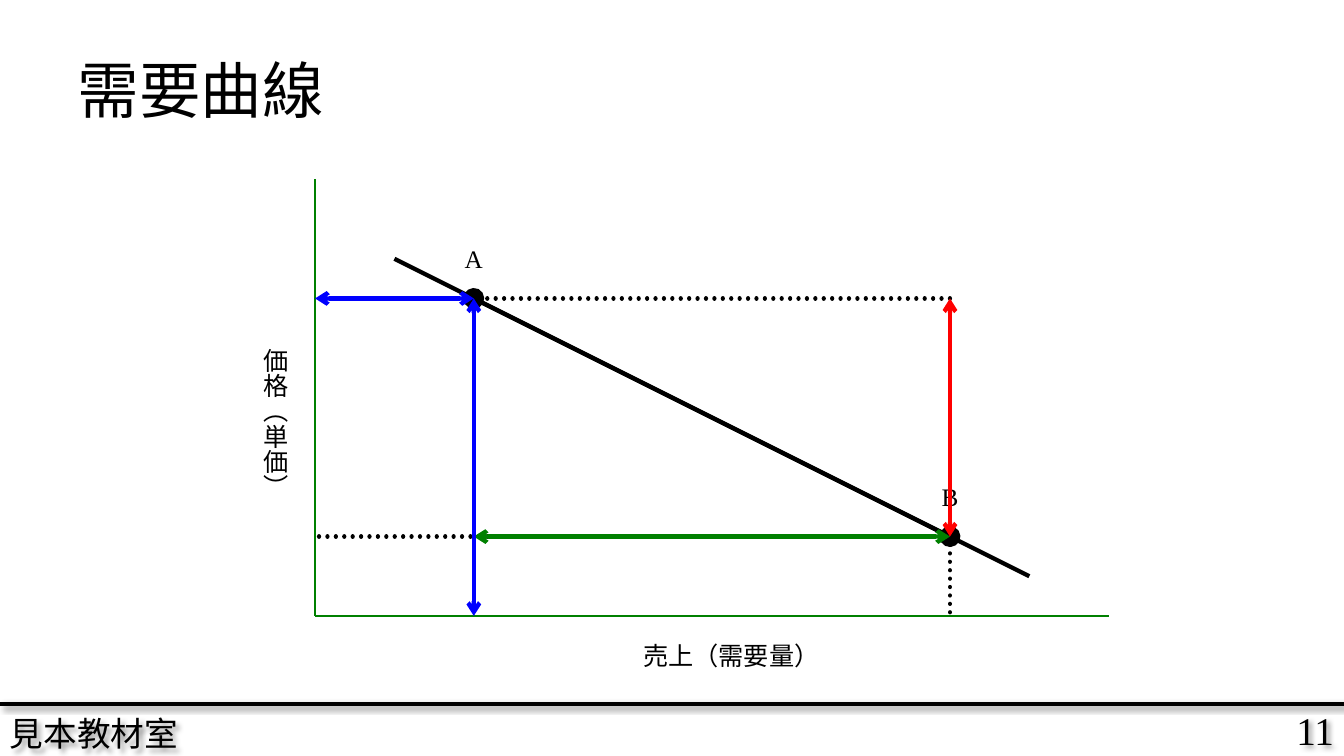
import pptx
import pptx.dml.color
import pptx.enum.dml
import pptx.enum.shapes
import pptx.enum.text
import pptx.oxml
import pptx.oxml.ns
import pptx.util
from pptx.util import Cm

ALIGN = pptx.enum.text.PP_ALIGN
DRAWING = "http://schemas.openxmlformats.org/drawingml/2006/main"
BLACK, GREEN, RED, BLUE = "000000", "008000", "FF0000", "0000FF"


def colour(value):
    return pptx.dml.color.RGBColor.from_string(value)


def effects(shadow):
    if not shadow:
        return pptx.oxml.parse_xml(f'<a:effectLst xmlns:a="{DRAWING}"/>')
    return pptx.oxml.parse_xml(
        f'<a:effectLst xmlns:a="{DRAWING}">'
        '<a:outerShdw blurRad="50800" dist="38100" dir="2700000" algn="tl" rotWithShape="0">'
        '<a:srgbClr val="000000"><a:alpha val="40000"/></a:srgbClr>'
        '</a:outerShdw></a:effectLst>')


class DemandPage:
    """Draws the demand curve slide on a grid of centimetres from the axis origin."""

    latin = "Times New Roman"
    asian = "Noto Sans CJK JP"
    origin_x, origin_y = 7.94, 15.52

    def __init__(self, deck):
        self.page = deck.slides.add_slide(deck.slide_layouts[5])

    def place(self, point):
        return self.origin_x + point[0], self.origin_y - point[1]

    def format(self, frame, size, font, align):
        frame.vertical_anchor = pptx.enum.text.MSO_ANCHOR.MIDDLE
        para = frame.paragraphs[0]
        para.alignment = align
        span = para.runs[0]
        span.font.size = pptx.util.Pt(size)
        span.font.name = font
        span.font.color.rgb = colour(BLACK)
        latin = span.font._element.find(pptx.oxml.ns.qn("a:latin"))
        latin.addnext(pptx.oxml.parse_xml(
            f'<a:ea xmlns:a="{DRAWING}" typeface="{self.asian}"/>'))

    def title(self, text, left, top, width, height):
        title = self.page.shapes.title
        title.left, title.top = Cm(left), Cm(top)
        title.width, title.height = Cm(width), Cm(height)
        title.text_frame.text = text
        self.format(title.text_frame, 44, self.asian, ALIGN.LEFT)
        title.text_frame.paragraphs[0].line_spacing = 0.9

    def text(self, text, left, top, width, height, size=18,
             align=ALIGN.CENTER, wrap=False, vertical=False, shadow=False):
        box = self.page.shapes.add_textbox(Cm(left), Cm(top), Cm(width), Cm(height))
        frame = box.text_frame
        frame.text = text
        frame.word_wrap = wrap
        if vertical:
            frame._txBody.bodyPr.set("vert", "eaVert")
        if shadow:
            box._element.spPr.append(effects(True))
        self.format(frame, size, self.latin, align)

    def line(self, start, end, shade=BLACK, width=3, dotted=False, ends=None, shadow=False):
        points = [Cm(value) for value in (*start, *end)]
        connector = self.page.shapes.add_connector(
            pptx.enum.shapes.MSO_CONNECTOR.STRAIGHT, *points)
        connector.line.color.rgb = colour(shade)
        connector.line.width = pptx.util.Pt(width)
        properties = connector._element.spPr
        outline = properties.find(pptx.oxml.ns.qn("a:ln"))
        if dotted:
            connector.line.dash_style = pptx.enum.dml.MSO_LINE.ROUND_DOT
            outline.set("cap", "rnd")
        if ends:
            scale = "lg" if ends == "oval" else "med"
            for tag in ("headEnd", "tailEnd"):
                outline.append(pptx.oxml.parse_xml(
                    f'<a:{tag} xmlns:a="{DRAWING}" type="{ends}" w="{scale}" len="{scale}"/>'))
        properties.append(effects(shadow))

    def plot(self, start, end, **style):
        self.line(self.place(start), self.place(end), **style)

    def point_label(self, text, point):
        x, y = self.place(point)
        self.text(text, x - 1, y - 2, 2, 2)


def main():
    deck = pptx.Presentation()
    deck.slide_width, deck.slide_height = Cm(33.87), Cm(19.05)
    slide = DemandPage(deck)

    slide.text("11", 29.34, 17.73, 4.53, 1.3, size=28, align=ALIGN.RIGHT, wrap=True, shadow=True)
    slide.text("見本教材室", 0, 17.91, 9.14, 1.14, size=24, align=ALIGN.LEFT, wrap=True, shadow=True)
    slide.line((0, 17.73), (33.87, 17.73), shadow=True)
    slide.title("需要曲線", 1.7, 0.76, 30.48, 3.18)

    origin = (0, 0)
    a, b = (4, 8), (16, 2)
    a_price, a_sales = (0, a[1]), (a[0], 0)
    b_price, b_sales = (0, b[1]), (b[0], 0)
    above_b, below_a = (b[0], a[1]), (a[0], b[1])

    slide.plot((0, 11), origin, shade=GREEN, width=2)
    slide.plot(origin, (20, 0), shade=GREEN, width=2)
    slide.plot((2, 9), (18, 1))
    slide.text("売上（需要量）", 15.93, 15.52, 5, 2)
    slide.text("価格（単価）", 5.94, 8.53, 2, 5, vertical=True)
    slide.plot(a, b, ends="oval")
    slide.point_label("A", a)
    slide.point_label("B", b)

    for start, end in ((a, a_sales), (b, b_sales), (b, b_price), (a, a_price), (above_b, a)):
        slide.plot(start, end, dotted=True)
    for start, end, shade in ((b, below_a, GREEN), (b, above_b, RED),
                              (a, a_price, BLUE), (a, a_sales, BLUE)):
        slide.plot(start, end, shade=shade, ends="arrow")

    deck.save("out.pptx")


if __name__ == "__main__":
    main()
